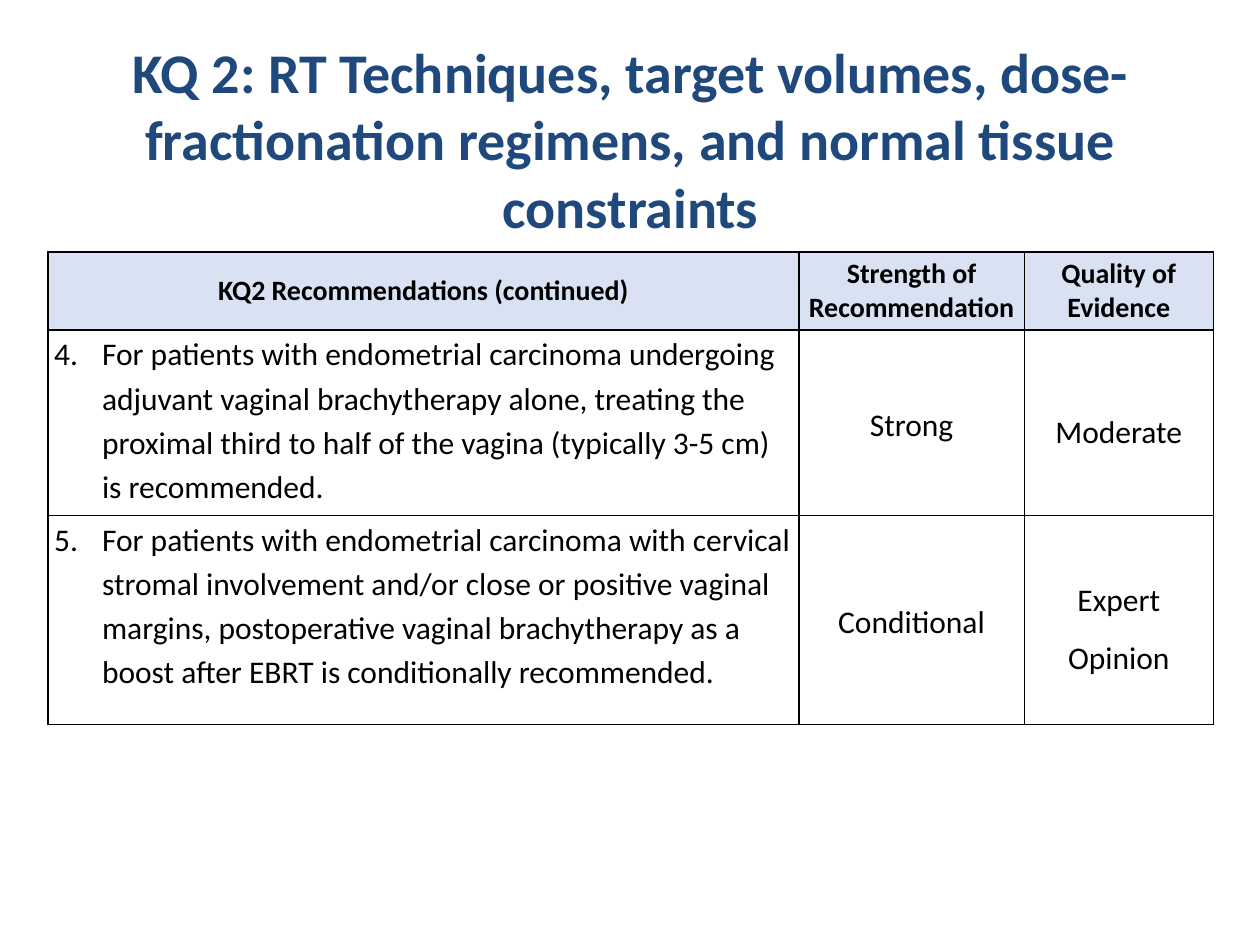
from lxml import etree
from pptx import Presentation
from pptx.dml.color import RGBColor
from pptx.enum import text
from pptx.oxml import ns
from pptx.util import Inches, Pt

NAVY = RGBColor(0x1F, 0x49, 0x7D)
BLACK = RGBColor(0, 0, 0)
PALE_BLUE = RGBColor(0xD9, 0xE2, 0xF3)
FONT = "Calibri"
LEFT, WIDTH = 0.38, 9.25
COLUMNS = [5.96, 1.79, 1.5]
ROWS = [0.62, 1.47, 1.66]
LINE_SPACING = [1.15, 1.15, 1.5]
FIRST_NUMBER = 4
TITLE = ("KQ 2: RT Techniques, target volumes, dose-fractionation regimens, "
         "and normal tissue constraints")
RECOMMENDATIONS = [
    ["KQ2 Recommendations (continued)", "Strength of Recommendation", "Quality of Evidence"],
    ["For patients with endometrial carcinoma undergoing adjuvant vaginal brachytherapy "
     "alone, treating the proximal third to half of the vagina (typically 3-5 cm) is "
     "recommended.", "Strong", "Moderate"],
    ["For patients with endometrial carcinoma with cervical stromal involvement and/or "
     "close or positive vaginal margins, postoperative vaginal brachytherapy as a boost "
     "after EBRT is conditionally recommended.", "Conditional", "Expert Opinion"],
]


def style(p, size, color, bold=False, align=text.PP_ALIGN.CENTER):
    """Set alignment and font of a paragraph's runs."""
    p.alignment = align
    for r in p.runs:
        r.font.name = FONT
        r.font.size = Pt(size)
        r.font.bold = bold
        r.font.color.rgb = color


def add_title(s):
    """Add the slide title."""
    sp = s.shapes.add_textbox(Inches(LEFT), Inches(0.25), Inches(WIDTH), Inches(1.42))
    tf = sp.text_frame
    tf.word_wrap = True
    tf.vertical_anchor = text.MSO_ANCHOR.TOP
    tf.text = TITLE
    style(tf.paragraphs[0], 32, NAVY, bold=True)


def add_borders(cell):
    """Draw a thin black line on every side of a cell."""
    tcPr = cell._tc.get_or_add_tcPr()
    for side in ("lnL", "lnR", "lnT", "lnB"):
        ln = etree.SubElement(tcPr, ns.qn(f"a:{side}"), w=str(Pt(1)))
        fill = etree.SubElement(ln, ns.qn("a:solidFill"))
        etree.SubElement(fill, ns.qn("a:srgbClr"), val=str(BLACK))


def add_number(p, start):
    """Number a paragraph with a hanging indent."""
    pPr = p._p.get_or_add_pPr()
    pPr.set("marL", str(Inches(0.38)))
    pPr.set("indent", str(-Inches(0.38)))
    etree.SubElement(pPr, ns.qn("a:buFont"), typeface="+mj-lt")
    etree.SubElement(pPr, ns.qn("a:buAutoNum"), type="arabicPeriod", startAt=str(start))


def fill_cell(cell, words, row, col):
    """Write and format one table cell."""
    header = row == 0
    numbered = col == 0 and not header
    cell.margin_left = cell.margin_right = Inches(0.05)
    cell.margin_top = cell.margin_bottom = 0
    cell.vertical_anchor = text.MSO_ANCHOR.TOP if numbered else text.MSO_ANCHOR.MIDDLE
    add_borders(cell)
    if header:
        cell.fill.solid()
        cell.fill.fore_color.rgb = PALE_BLUE
    else:
        cell.fill.background()
    cell.text_frame.text = words
    p = cell.text_frame.paragraphs[0]
    if numbered:
        add_number(p, FIRST_NUMBER + row - 1)
    if not header:
        p.line_spacing = LINE_SPACING[col]
    align = text.PP_ALIGN.LEFT if numbered else text.PP_ALIGN.CENTER
    style(p, 16 if header else 18, BLACK, bold=header, align=align)


def add_recommendations(s):
    """Add the table of recommendations."""
    table = s.shapes.add_table(len(ROWS), len(COLUMNS), Inches(LEFT), Inches(2),
                               Inches(WIDTH), Inches(sum(ROWS))).table
    table.horz_banding = False
    for column, width in zip(table.columns, COLUMNS):
        column.width = Inches(width)
    for i, (height, values) in enumerate(zip(ROWS, RECOMMENDATIONS)):
        table.rows[i].height = Inches(height)
        for j, words in enumerate(values):
            fill_cell(table.cell(i, j), words, i, j)


def main():
    """Build and save the slide."""
    prs = Presentation()
    prs.slide_width, prs.slide_height = Inches(10), Inches(7.5)
    s = prs.slides.add_slide(prs.slide_layouts[6])
    add_title(s)
    add_recommendations(s)
    prs.save("out.pptx")


if __name__ == "__main__":
    main()
